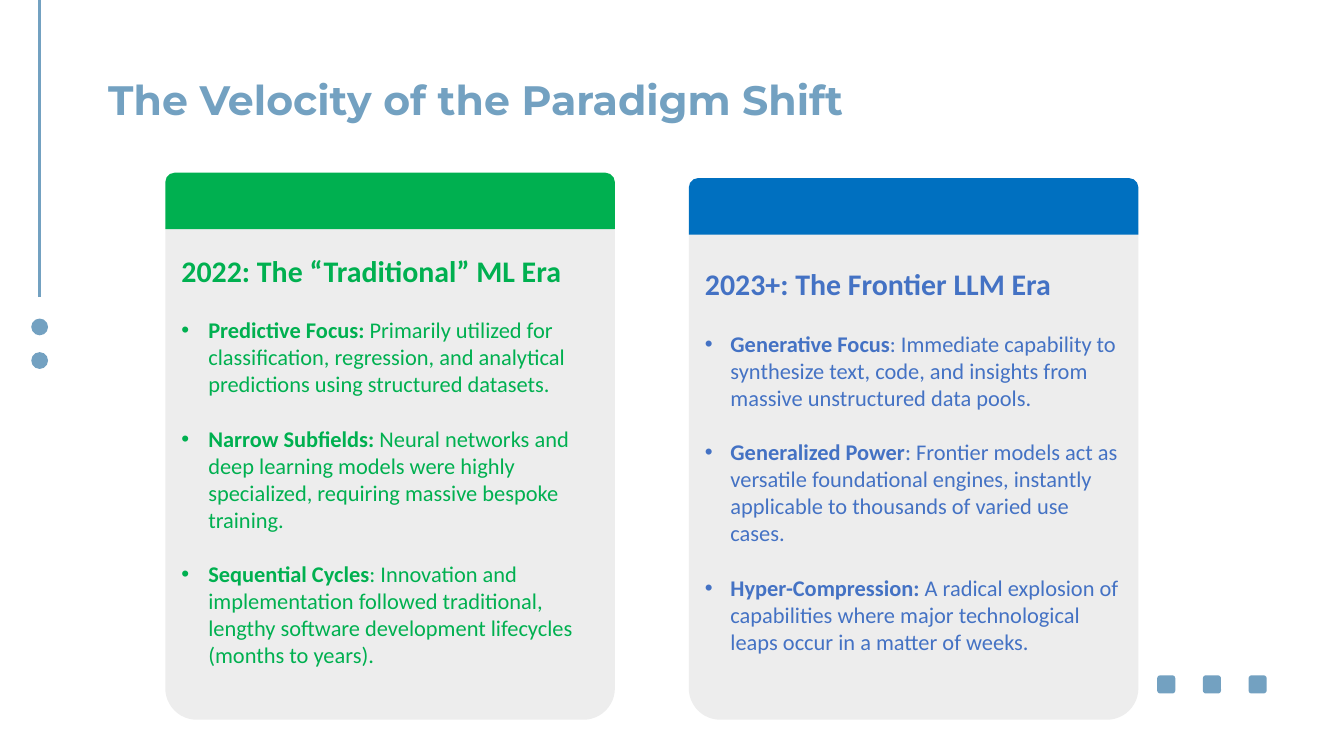
from dataclasses import dataclass

from lxml import etree
from pptx import Presentation
from pptx.dml.color import RGBColor
from pptx.enum.shapes import MSO_CONNECTOR, MSO_SHAPE
from pptx.enum.text import MSO_ANCHOR, MSO_AUTO_SIZE, PP_ALIGN
from pptx.oxml.ns import qn
from pptx.util import Inches, Pt

STEEL = RGBColor(0x73, 0xA1, 0xC1)
GREEN = RGBColor(0x00, 0xB0, 0x50)
BLUE = RGBColor(0x00, 0x70, 0xC0)
INDIGO = RGBColor(0x44, 0x72, 0xC4)
LIGHT_GRAY = RGBColor(0xED, 0xED, 0xED)

STRAIGHT = MSO_CONNECTOR.STRAIGHT
OVAL = MSO_SHAPE.OVAL
ROUNDED = MSO_SHAPE.ROUNDED_RECTANGLE
TOP_ROUNDED = MSO_SHAPE.ROUND_2_SAME_RECTANGLE
MIDDLE = MSO_ANCHOR.MIDDLE
NO_AUTOFIT = MSO_AUTO_SIZE.NONE
LEFT = PP_ALIGN.LEFT

CARD_TOP, CARD_WIDTH, CARD_HEIGHT = 2.99, 6.69, 7.72
BAR_HEIGHT = 0.84
CARD_INSET = 0.24
ICON_SIZE = 0.27
DOT_SIZE = 0.25
RAIL_X = 0.59


@dataclass(frozen=True)
class Point:
    label: str
    detail: str


@dataclass(frozen=True)
class Era:
    left: float
    bar_top: float
    bar_color: RGBColor
    text_color: RGBColor
    indent: float
    heading: str
    points: tuple[Point, ...]


ERAS = (
    Era(2.46, 2.57, GREEN, GREEN, 0.4, "2022: The “Traditional” ML Era", (
        Point("Predictive Focus: ",
              "Primarily utilized for classification, regression, and "
              "analytical predictions using structured datasets."),
        Point("Narrow Subfields: ",
              "Neural networks and deep learning models were highly "
              "specialized, requiring massive bespoke training."),
        Point("Sequential Cycles",
              ": Innovation and implementation followed traditional, lengthy "
              "software development lifecycles (months to years)."),
    )),
    Era(10.25, 2.65, BLUE, INDIGO, 0.38, "2023+: The Frontier LLM Era", (
        Point("Generative Focus",
              ": Immediate capability to synthesize text, code, and insights "
              "from massive unstructured data pools."),
        Point("Generalized Power",
              ": Frontier models act as versatile foundational engines, "
              "instantly applicable to thousands of varied use cases."),
        Point("Hyper-Compression: ",
              "A radical explosion of capabilities where major technological "
              "leaps occur in a matter of weeks."),
    )),
)


def place(shape, left: float, top: float, width: float, height: float) -> None:
    shape.left, shape.top = Inches(left), Inches(top)
    shape.width, shape.height = Inches(width), Inches(height)


def add_filled(slide, kind, left: float, top: float, width: float,
               height: float, color: RGBColor):
    shape = slide.shapes.add_shape(
        kind, Inches(left), Inches(top), Inches(width), Inches(height))
    shape.shadow.inherit = False
    shape.fill.solid()
    shape.fill.fore_color.rgb = color
    shape.line.fill.background()
    return shape


def add_text(paragraph, text: str, *, size: float, color: RGBColor,
             font: str = "Calibri", bold: bool = False) -> None:
    run = paragraph.add_run()
    run.text = text
    run.font.name = font
    run.font.size = Pt(size)
    run.font.bold = bold
    run.font.color.rgb = color


def format_paragraph(paragraph, indent: float, bulleted: bool) -> None:
    paragraph.alignment = LEFT
    paragraph.space_before = Pt(0)
    paragraph.space_after = Pt(30)
    properties = paragraph._p.get_or_add_pPr()
    properties.set("marL", str(Inches(indent)))
    properties.set("indent", str(-Inches(indent)))
    if not bulleted:
        etree.SubElement(properties, qn("a:buNone"))


def prepare_frame(shape, horizontal_inset: float):
    frame = shape.text_frame
    frame.word_wrap = True
    frame.auto_size = NO_AUTOFIT
    frame.vertical_anchor = MIDDLE
    frame.margin_left = frame.margin_right = Inches(horizontal_inset)
    frame.margin_top = frame.margin_bottom = Inches(0)
    return frame


def draw_title(slide) -> None:
    title = slide.shapes.title
    place(title, 1.51, 1.05, 17.49, 0.84)
    paragraph = prepare_frame(title, 0.1).paragraphs[0]
    paragraph.alignment = LEFT
    add_text(paragraph, "The Velocity of the Paradigm Shift",
             size=44, color=STEEL, font="Montserrat", bold=True)


def draw_rail(slide) -> None:
    rail = slide.shapes.add_connector(
        STRAIGHT, Inches(RAIL_X), Inches(4.42), Inches(RAIL_X), Inches(0))
    rail.line.color.rgb = STEEL
    rail.line.width = Pt(3)
    etree.SubElement(rail._element.spPr, qn("a:effectLst"))
    for top in (4.74, 5.24):
        add_filled(slide, OVAL, RAIL_X - DOT_SIZE / 2, top,
                   DOT_SIZE, DOT_SIZE, STEEL)


def draw_era(slide, body, era: Era) -> None:
    card = add_filled(slide, ROUNDED, era.left, CARD_TOP,
                      CARD_WIDTH, CARD_HEIGHT, LIGHT_GRAY)
    card.adjustments[0] = 0.07
    add_filled(slide, TOP_ROUNDED, era.left, era.bar_top,
               CARD_WIDTH, BAR_HEIGHT, era.bar_color)

    card._element.addnext(body._element)
    place(body, era.left, CARD_TOP, CARD_WIDTH, CARD_HEIGHT)
    frame = prepare_frame(body, CARD_INSET)
    heading = frame.paragraphs[0]
    format_paragraph(heading, 0, bulleted=False)
    add_text(heading, era.heading, size=32, color=era.text_color, bold=True)
    for point in era.points:
        paragraph = frame.add_paragraph()
        format_paragraph(paragraph, era.indent, bulleted=True)
        add_text(paragraph, point.label, size=24, color=era.text_color, bold=True)
        add_text(paragraph, point.detail, size=24, color=era.text_color)


def draw_icons(slide) -> None:
    for index in range(3):
        add_filled(slide, ROUNDED, 17.22 + 0.68 * index, 10.05,
                   ICON_SIZE, ICON_SIZE, STEEL)


def main() -> None:
    presentation = Presentation()
    presentation.slide_width = Inches(20)
    presentation.slide_height = Inches(11.25)
    slide = presentation.slides.add_slide(presentation.slide_layouts[3])
    bodies = list(slide.placeholders)[1:]
    draw_title(slide)
    draw_rail(slide)
    for body, era in zip(bodies, ERAS):
        draw_era(slide, body, era)
    draw_icons(slide)
    presentation.save("out.pptx")


if __name__ == "__main__":
    main()
